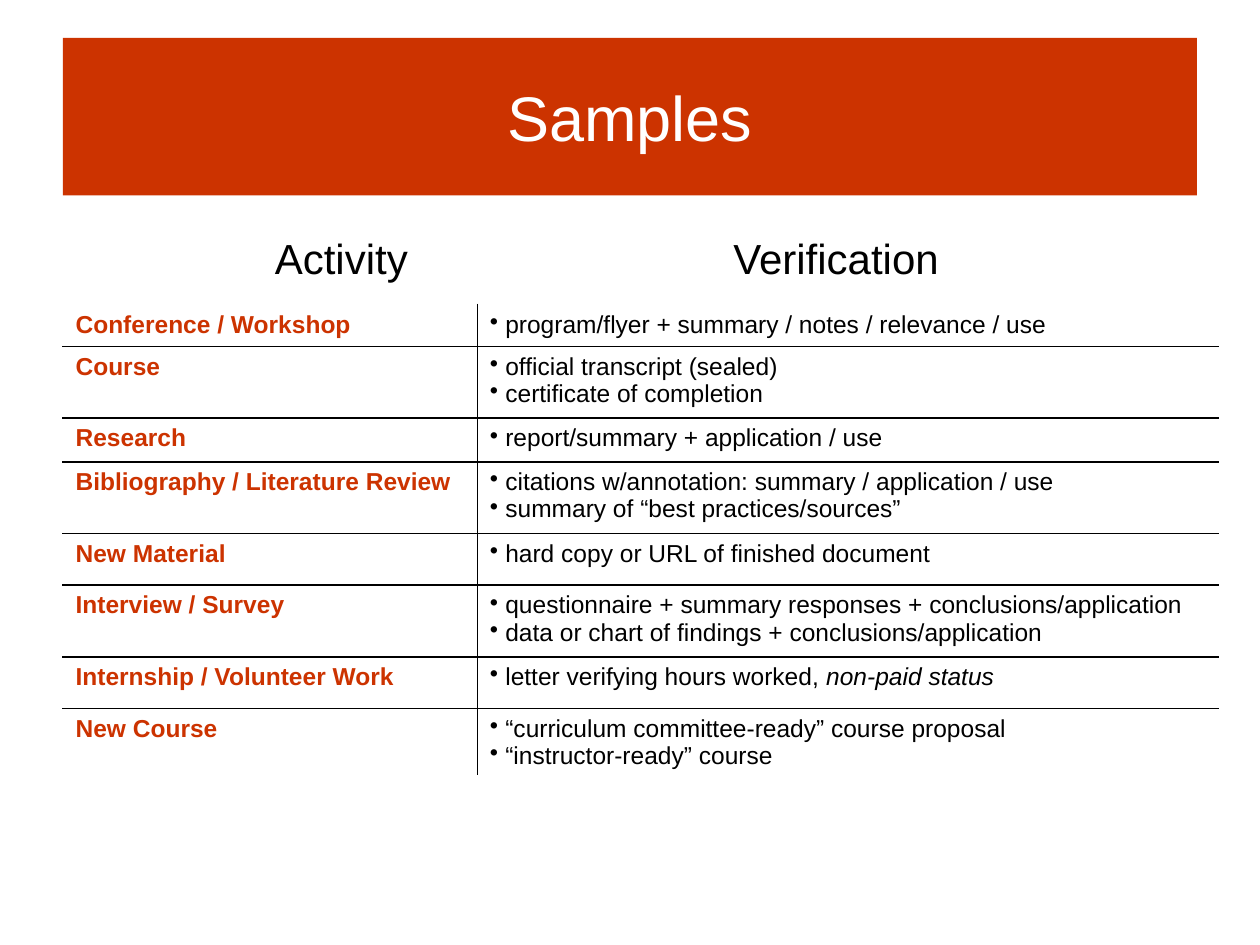
from lxml import etree
from pptx import Presentation
from pptx.dml.color import RGBColor
from pptx.enum import shapes, text
from pptx.oxml.ns import qn
from pptx.util import Pt

RED, BLACK, WHITE = "CC3300", "000000", "FFFFFF"

ROWS = [
    (24, "Conference / Workshop",
     ["program/flyer + summary / notes / relevance / use"]),
    (41, "Course",
     ["official transcript (sealed)", "certificate of completion"]),
    (25, "Research", ["report/summary + application / use"]),
    (41, "Bibliography / Literature Review",
     ["citations w/annotation: summary / application / use",
      "summary of “best practices/sources”"]),
    (29.5, "New Material", ["hard copy or URL of finished document"]),
    (41, "Interview / Survey",
     ["questionnaire + summary responses + conclusions/application",
      "data or chart of findings + conclusions/application"]),
    (29.5, "Internship / Volunteer Work",
     [("letter verifying hours worked, ", "non-paid status")]),
    (38.5, "New Course",
     ["“curriculum committee-ready” course proposal",
      "“instructor-ready” course"]),
]


def color(code):
    return RGBColor.from_string(code)


def write(para, words, size=14, tint=BLACK, bold=False, italic=False,
          align=text.PP_ALIGN.LEFT):
    para.alignment = align
    run = para.add_run()
    run.text = words
    font = run.font
    font.name, font.size = "Arial", Pt(size)
    font.bold, font.italic = bold, italic
    font.color.rgb = color(tint)


def add_bullet(para, indent=8.8):
    props = para._p.get_or_add_pPr()
    props.set("marL", str(Pt(indent)))
    props.set("indent", str(-Pt(indent)))
    etree.SubElement(props, qn("a:buChar"), char="•")


def add_banner(slide, words):
    box = slide.shapes.add_shape(shapes.MSO_SHAPE.RECTANGLE,
                                 Pt(36), Pt(21.6), Pt(648), Pt(90))
    box.shadow.inherit = False
    box.fill.solid()
    box.fill.fore_color.rgb = color(RED)
    box.line.fill.background()
    frame = box.text_frame
    frame.vertical_anchor = text.MSO_ANCHOR.MIDDLE
    write(frame.paragraphs[0], words, size=36, tint=WHITE,
          align=text.PP_ALIGN.CENTER)


def add_heads(slide, left, right, gap):
    box = slide.shapes.add_textbox(Pt(150), Pt(129.6), Pt(504), Pt(36))
    frame = box.text_frame
    frame.word_wrap = True
    para = frame.paragraphs[0]
    write(para, f"{left}\t{right}", size=24)
    tabs = etree.SubElement(para._p.get_or_add_pPr(), qn("a:tabLst"))
    etree.SubElement(tabs, qn("a:tab"), pos=str(Pt(gap)), algn="l")


def set_edges(cell, **edges):
    props = cell._tc.get_or_add_tcPr()
    for spot, side in enumerate("LRTB"):
        line = etree.Element(qn(f"a:ln{side}"), w=str(Pt(1)))
        fill = etree.SubElement(line, qn("a:solidFill"))
        etree.SubElement(fill, qn("a:srgbClr"), val=edges[side])
        props.insert(spot, line)


def fill_notes(frame, notes):
    for spot, note in enumerate(notes):
        para = frame.add_paragraph() if spot else frame.paragraphs[0]
        plain, slant = (note, "") if isinstance(note, str) else note
        write(para, plain)
        if slant:
            write(para, slant, italic=True)
        add_bullet(para)


def add_grid(slide, rows):
    high = sum(row[0] for row in rows)
    grid = slide.shapes.add_table(len(rows), 2, Pt(36), Pt(174),
                                  Pt(660), Pt(high)).table
    grid.first_row = grid.horz_banding = False
    grid.columns[0].width, grid.columns[1].width = Pt(236.8), Pt(423.2)
    last = len(rows) - 1
    for spot, (tall, name, notes) in enumerate(rows):
        grid.rows[spot].height = Pt(tall)
        left, right = grid.cell(spot, 0), grid.cell(spot, 1)
        write(left.text_frame.paragraphs[0], name, tint=RED, bold=True)
        fill_notes(right.text_frame, notes)
        top = BLACK if spot else WHITE
        base = BLACK if spot < last else WHITE
        for cell, near, far in ((left, WHITE, BLACK), (right, BLACK, WHITE)):
            cell.fill.background()
            set_edges(cell, L=near, R=far, T=top, B=base)


def main():
    deck = Presentation()
    deck.slide_width, deck.slide_height = Pt(720), Pt(540)
    slide = deck.slides.add_slide(deck.slide_layouts[6])
    add_banner(slide, "Samples")
    add_grid(slide, ROWS)
    add_heads(slide, "Activity", "Verification", gap=262)
    deck.save("out.pptx")


if __name__ == "__main__":
    main()
